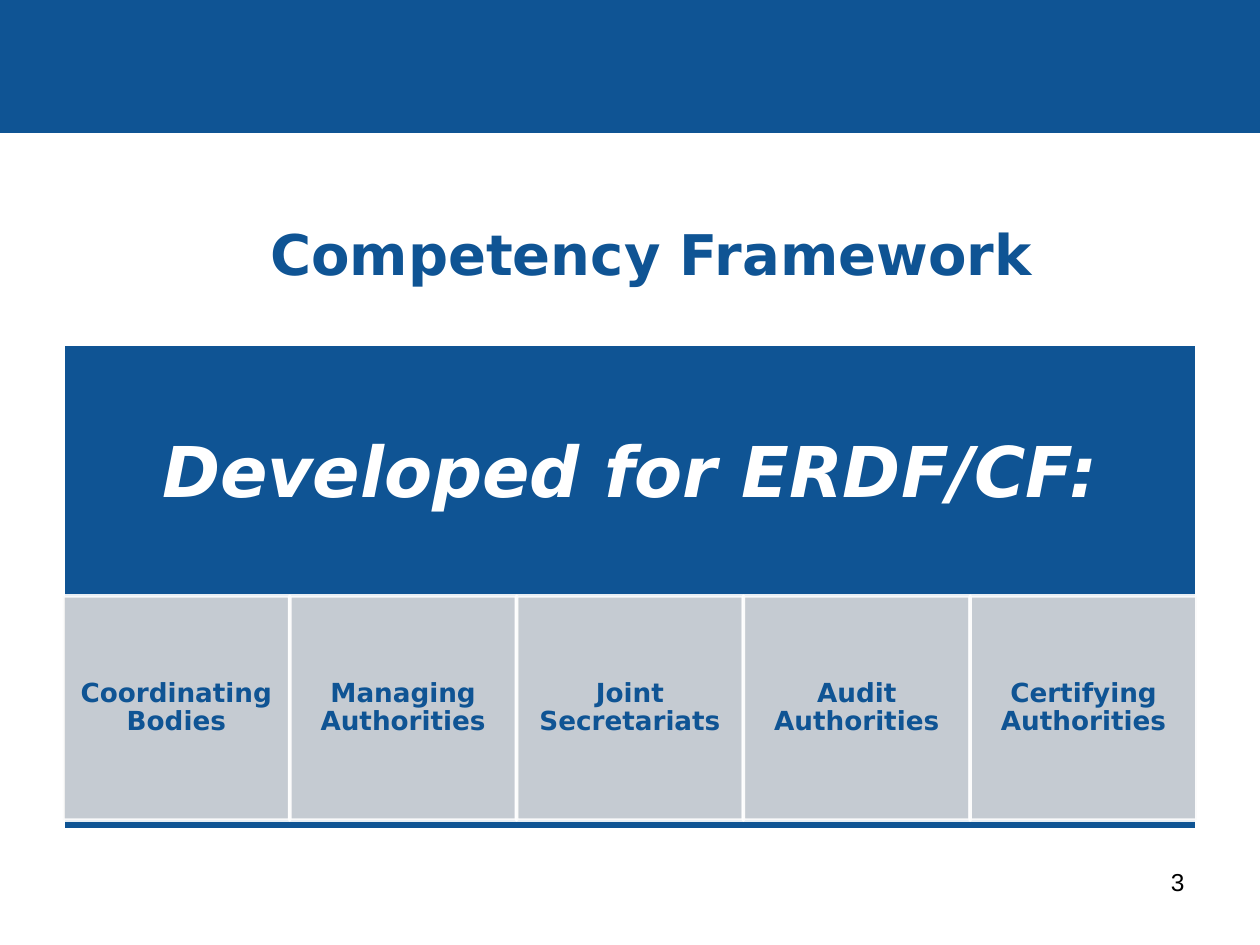
from lxml.etree import SubElement
from pptx import Presentation
from pptx.dml.color import RGBColor
from pptx.enum.shapes import MSO_SHAPE
from pptx.enum.text import MSO_ANCHOR, PP_ALIGN
from pptx.oxml.ns import qn
from pptx.util import Inches, Pt

COLORS = {"blue": "0F5494", "grey": "D9D9D9", "white": "FFFFFF", "black": "000000"}
GRID_COLUMNS, GRID_ROWS = 20, 15
BODIES = [
    "Coordinating Bodies",
    "Managing Authorities",
    "Joint Secretariats",
    "Audit Authorities",
    "Certifying Authorities",
]


def color(name):
    return RGBColor.from_string(COLORS[name])


class SlideBuilder:
    """Place styled elements on a slide by grid columns and rows."""

    def __init__(self, deck):
        self.column = deck.slide_width / GRID_COLUMNS
        self.row = deck.slide_height / GRID_ROWS
        self.font = "DejaVu Sans"
        self.slide = deck.slides.add_slide(deck.slide_layouts[6])

    def place(self, left, top, width, height):
        return [
            round(length * unit)
            for length, unit in zip(
                (left, top, width, height),
                (self.column, self.row, self.column, self.row),
            )
        ]

    def rectangle(self, area, fill, line, line_width, opacity=100):
        box = self.slide.shapes.add_shape(MSO_SHAPE.RECTANGLE, *self.place(*area))
        box.shadow.inherit = False
        box.fill.solid()
        box.fill.fore_color.rgb = color(fill)
        box.line.color.rgb = color(line)
        box.line.width = Pt(line_width)
        if opacity < 100:
            for tint in box.element.spPr.iter(qn("a:srgbClr")):
                SubElement(tint, qn("a:alpha"), val=str(opacity * 1000))
        return box

    def text_box(self, area, text, ink, **style):
        box = self.slide.shapes.add_textbox(*self.place(*area))
        self.add_label(box, text, ink, **style)

    def add_label(self, box, text, ink, frame=None, para=None, font=None):
        text_frame = box.text_frame
        paragraph = text_frame.paragraphs[0]
        span = paragraph.add_run()
        span.text = text
        span.font.color.rgb = color(ink)
        formats = (
            (text_frame, {"word_wrap": True, **(frame or {})}),
            (paragraph, {"alignment": PP_ALIGN.CENTER, **(para or {})}),
            (span.font, {"name": self.font, "bold": True, **(font or {})}),
        )
        for target, values in formats:
            for name, value in values.items():
                setattr(target, name, value)


def margins(horizontal, vertical):
    return {
        "margin_left": Inches(horizontal),
        "margin_right": Inches(horizontal),
        "margin_top": Inches(vertical),
        "margin_bottom": Inches(vertical),
        "vertical_anchor": MSO_ANCHOR.MIDDLE,
    }


def main():
    deck = Presentation()
    deck.slide_width, deck.slide_height = Inches(10), Inches(7.5)
    builder = SlideBuilder(deck)

    builder.rectangle((0, 0, GRID_COLUMNS, 2.1), "blue", "blue", 0.75)
    builder.text_box(
        (1.34, 3.5, 18, 2.04), "Competency Framework", "blue",
        frame={"vertical_anchor": MSO_ANCHOR.MIDDLE, "margin_bottom": Inches(0.56)},
        font={"size": Pt(32)},
    )
    builder.text_box(
        (14.34, 13.66, 4.66, 1.04), "3", "black",
        para={"alignment": PP_ALIGN.RIGHT},
        font={"name": "Arial", "size": Pt(14), "bold": False},
    )

    builder.rectangle((1, 5.46, 18, 7.72), "blue", "white", 2)
    builder.text_box(
        (1, 5.46, 18, 4.16), "Developed for ERDF/CF:", "white",
        frame=margins(0.31, 0.31),
        para={"line_spacing": 0.9},
        font={"size": Pt(40), "italic": True},
    )

    body_width = 18 / len(BODIES)
    for index, body in enumerate(BODIES):
        area = (1 + index * body_width, 9.46, body_width, 3.56)
        box = builder.rectangle(area, "grey", "white", 2, opacity=90)
        builder.add_label(
            box, body, "blue",
            frame=margins(0.12, 0.02),
            para={"line_spacing": 0.9},
            font={"size": Pt(15)},
        )

    deck.save("out.pptx")


if __name__ == "__main__":
    main()
